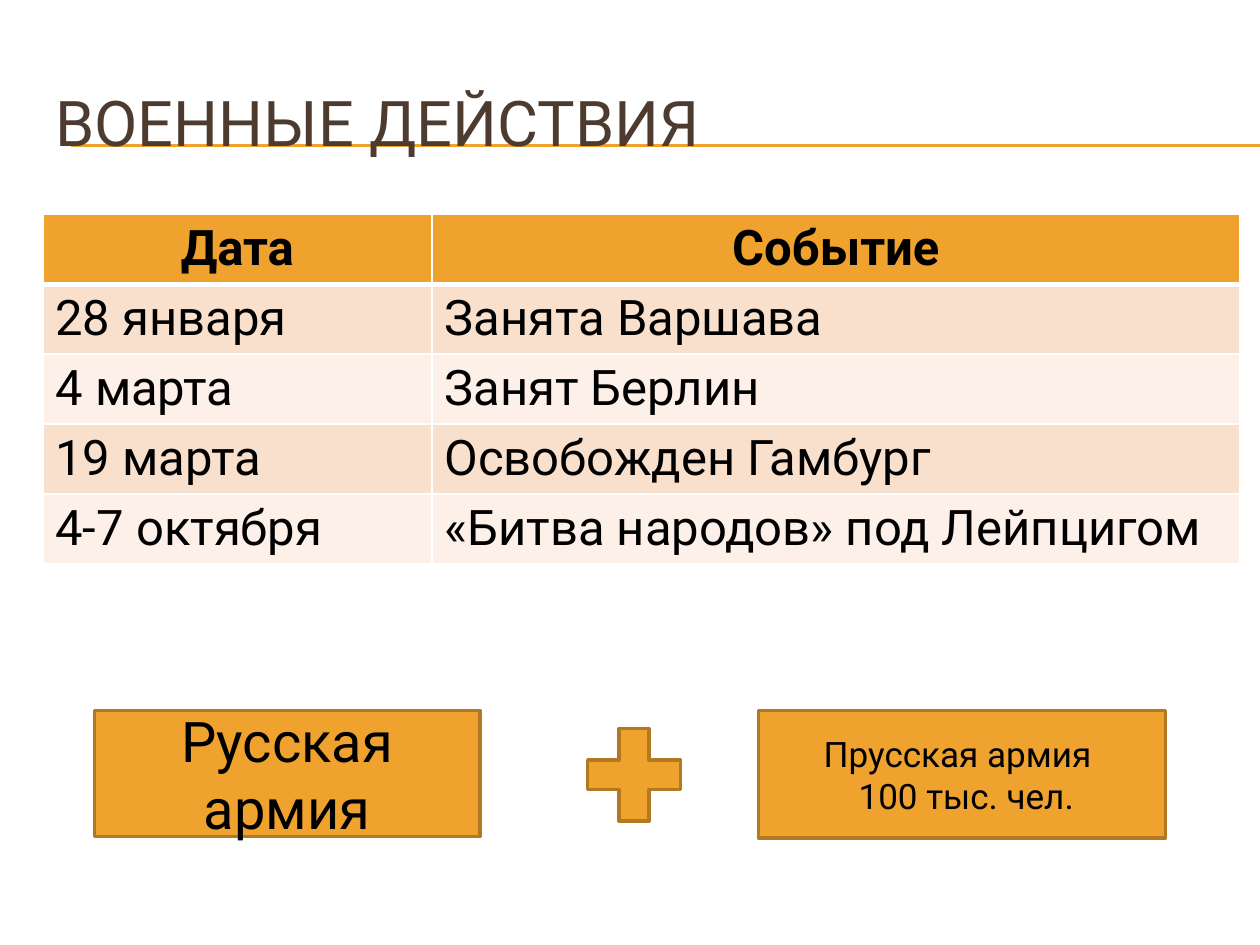
from lxml import etree
from pptx import Presentation
from pptx.dml.color import RGBColor
from pptx.enum.shapes import MSO_CONNECTOR, MSO_SHAPE
from pptx.enum.text import MSO_ANCHOR, PP_ALIGN
from pptx.oxml.ns import qn
from pptx.util import Inches, Pt

LEFT, CENTER = PP_ALIGN.LEFT, PP_ALIGN.CENTER
MIDDLE = MSO_ANCHOR.MIDDLE
RECT, PLUS = MSO_SHAPE.RECTANGLE, MSO_SHAPE.MATH_PLUS
STRAIGHT = MSO_CONNECTOR.STRAIGHT

WIDE, HIGH = 10, 7.5
FONT = "Roboto"
HEX = {"gold": "F0A22E", "edge": "B27822", "brown": "4E3B30", "ink": "000000",
       "odd": "F9E0CD", "even": "FCF0E8", "grid": "FFFFFF"}
ROWS = [
    ("Дата", "Событие"),
    ("28 января", "Занята Варшава"),
    ("4 марта", "Занят Берлин"),
    ("19 марта", "Освобожден Гамбург"),
    ("4-7 октября", "«Битва народов» под Лейпцигом"),
]


def color(name):
    return RGBColor.from_string(HEX[name])


def inches(box):
    return [Inches(v) for v in box]


def write(frame, lines, size, tint="ink", align=LEFT, bold=False):
    frame.word_wrap = True
    for i, line in enumerate(lines):
        para = frame.add_paragraph() if i else frame.paragraphs[0]
        para.alignment = align
        run = para.add_run()
        run.text = line
        font = run.font
        font.name, font.size, font.bold = FONT, Pt(size), bold
        font.color.rgb = color(tint)


def border(cell, side, width):
    props = cell._tc.get_or_add_tcPr()
    line = etree.SubElement(props, qn("a:" + side), w=str(Pt(width)))
    fill = etree.SubElement(line, qn("a:solidFill"))
    etree.SubElement(fill, qn("a:srgbClr"), val=HEX["grid"])


# Double rule that runs from under the title to the right edge
def rule(slide, left, top):
    for y in (top, top + 0.01):
        line = slide.shapes.add_connector(STRAIGHT, *inches((left, y, WIDE, y)))
        line.line.color.rgb = color("gold")
        line.line.width = Pt(0.75)
        etree.SubElement(line._element.spPr, qn("a:effectLst"))


def heading(slide, box, text):
    title = slide.shapes.title
    title.left, title.top, title.width, title.height = inches(box)
    title.text_frame.vertical_anchor = MIDDLE
    write(title.text_frame, [text], 36, "brown")
    # Keep the title above the rule
    slide.shapes._spTree.append(title._element)


def events(slide, box, share):
    table = slide.shapes.add_table(len(ROWS), 2, *inches(box)).table
    for col, part in zip(table.columns, (share, 1 - share)):
        col.width = Inches(box[2] * part)
    for r, row in enumerate(ROWS):
        head = r == 0
        for c, text in enumerate(row):
            cell = table.cell(r, c)
            write(cell.text_frame, [text], 28,
                  align=CENTER if head else LEFT, bold=head)
            for side in ("lnL", "lnR", "lnT", "lnB"):
                seam = (head and side == "lnB") or (r == 1 and side == "lnT")
                border(cell, side, 3 if seam else 1)
            cell.fill.solid()
            cell.fill.fore_color.rgb = color(
                "gold" if head else "odd" if r % 2 else "even")


def block(slide, kind, box, lines=(), size=20):
    shape = slide.shapes.add_shape(kind, *inches(box))
    shape.shadow.inherit = False
    shape.fill.solid()
    shape.fill.fore_color.rgb = color("gold")
    shape.line.color.rgb = color("edge")
    shape.line.width = Pt(2)
    shape.text_frame.vertical_anchor = MIDDLE
    write(shape.text_frame, lines, size, align=CENTER)


# Two armies joined by a plus sign
def armies(slide, box):
    x, y, w, h = box
    block(slide, RECT, (x, y, w * 0.36, h), ["Русская армия"], 32)
    block(slide, PLUS, (x + w * 0.445, y + 0.01, h, h))
    block(slide, RECT, (x + w * 0.62, y, w * 0.38, h + 0.01),
          ["Прусская армия ", " 100 тыс. чел."], 20)


def main():
    deck = Presentation()
    deck.slide_width, deck.slide_height = inches((WIDE, HIGH))
    slide = deck.slides.add_slide(deck.slide_layouts[5])
    edge, span = WIDE * 0.034, WIDE * 0.95
    rule(slide, WIDE * 0.056, 1.15)
    heading(slide, (edge, 0.5, span, 0.92), "ВОЕННЫЕ ДЕЙСТВИЯ")
    events(slide, (edge, 1.7, span, 2.77), 0.325)
    armies(slide, (WIDE * 0.075, HIGH * 0.752, WIDE * 0.85, 1))
    deck.save("out.pptx")


if __name__ == "__main__":
    main()
